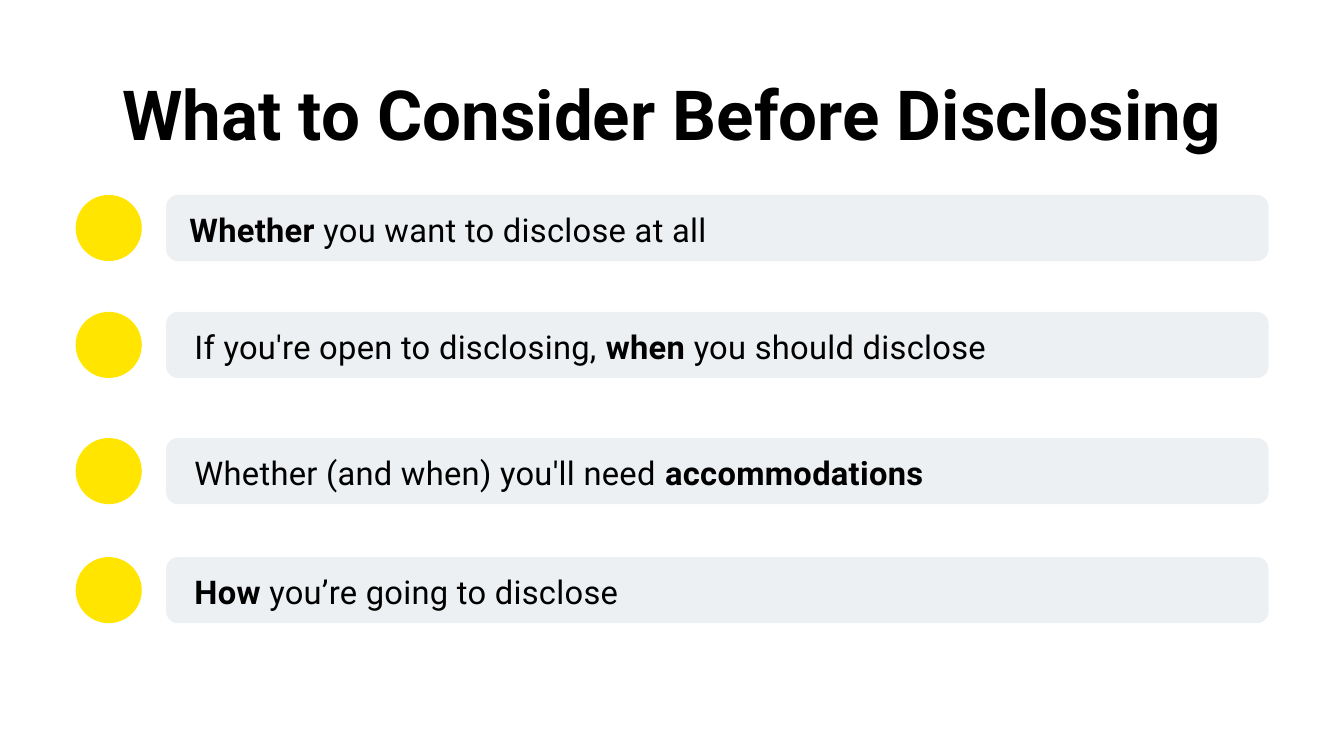
from pptx import Presentation
from pptx.dml.color import RGBColor
from pptx.enum.shapes import MSO_SHAPE as SHAPE
from pptx.enum.text import MSO_ANCHOR as ANCHOR, MSO_AUTO_SIZE as AUTO, PP_ALIGN as ALIGN
from pptx.util import Cm, Pt

FONT = "Roboto"
BLACK, YELLOW, GREY = "000000", "FFE500", "EDF0F2"
LEFT, BAR_LEFT = 2.86, 6.28
WIDTH, BAR_WIDTH, BAR_HEIGHT = 45.09, 41.67, 2.5

ITEMS = [
    (7.37, 7.16, [("Whether", True), (" you want to disclose at all", False)]),
    (11.79, 7.35, [("If you're open to disclosing, ", False), ("when", True),
                   (" you should disclose", False)]),
    (16.56, 7.35, [("Whether (and when) you'll need ", False), ("accommodations", True)]),
    (21.06, 7.35, [("How", True), (" you’re going to disclose", False)]),
]


def rgb(value):
    """Return the colour for a hex string."""
    return RGBColor.from_string(value)


def place(sp, left, top, width, height):
    """Move and size a shape, in centimetres."""
    sp.left, sp.top, sp.width, sp.height = Cm(left), Cm(top), Cm(width), Cm(height)


def format_text(tf, size, spacing, align):
    """Remove the frame's margins and style its first paragraph."""
    tf.margin_left = tf.margin_top = tf.margin_right = tf.margin_bottom = 0
    tf.word_wrap = True
    tf.auto_size = AUTO.NONE
    tf.vertical_anchor = ANCHOR.TOP
    p = tf.paragraphs[0]
    p.alignment = align
    p.line_spacing = Pt(spacing)
    p.font.name = FONT
    p.font.size = Pt(size)
    p.font.color.rgb = rgb(BLACK)
    return p


def add_title(s, text):
    """Fill and format the title placeholder."""
    sp = s.shapes.title
    place(sp, LEFT, 2.95, WIDTH, 2.92)
    sp.text_frame.text = text
    p = format_text(sp.text_frame, 74, 81.4, ALIGN.CENTER)
    p.font.bold = True


def add_plain_shape(s, kind, left, top, width, height, color):
    """Add a filled shape without line or shadow."""
    sp = s.shapes.add_shape(kind, Cm(left), Cm(top), Cm(width), Cm(height))
    sp.fill.solid()
    sp.fill.fore_color.rgb = rgb(color)
    sp.line.fill.background()
    sp.shadow.inherit = False
    return sp


def add_label(s, left, top, runs):
    """Add a line of text made of plain and bold runs."""
    sp = s.shapes.add_textbox(Cm(left), Cm(top), Cm(39.3), Cm(1.67))
    p = format_text(sp.text_frame, 35, 49, ALIGN.LEFT)
    for text, bold in runs:
        r = p.add_run()
        r.text = text
        r.font.bold = bold
        r.font._element.set("spc", "30")


def add_item(s, top, text_left, runs):
    """Add a dot, a bar and the label on it."""
    add_plain_shape(s, SHAPE.OVAL, LEFT, top, BAR_HEIGHT, BAR_HEIGHT, YELLOW)
    bar = add_plain_shape(s, SHAPE.ROUNDED_RECTANGLE, BAR_LEFT, top,
                          BAR_WIDTH, BAR_HEIGHT, GREY)
    bar.adjustments[0] = 0.18
    add_label(s, text_left, top + 0.31, runs)


def main():
    """Build the slide and save it."""
    prs = Presentation()
    prs.slide_width, prs.slide_height = Cm(50.8), Cm(28.58)
    s = prs.slides.add_slide(prs.slide_layouts[5])
    add_title(s, "What to Consider Before Disclosing")
    for top, text_left, runs in ITEMS:
        add_item(s, top, text_left, runs)
    prs.save("out.pptx")


if __name__ == "__main__":
    main()
